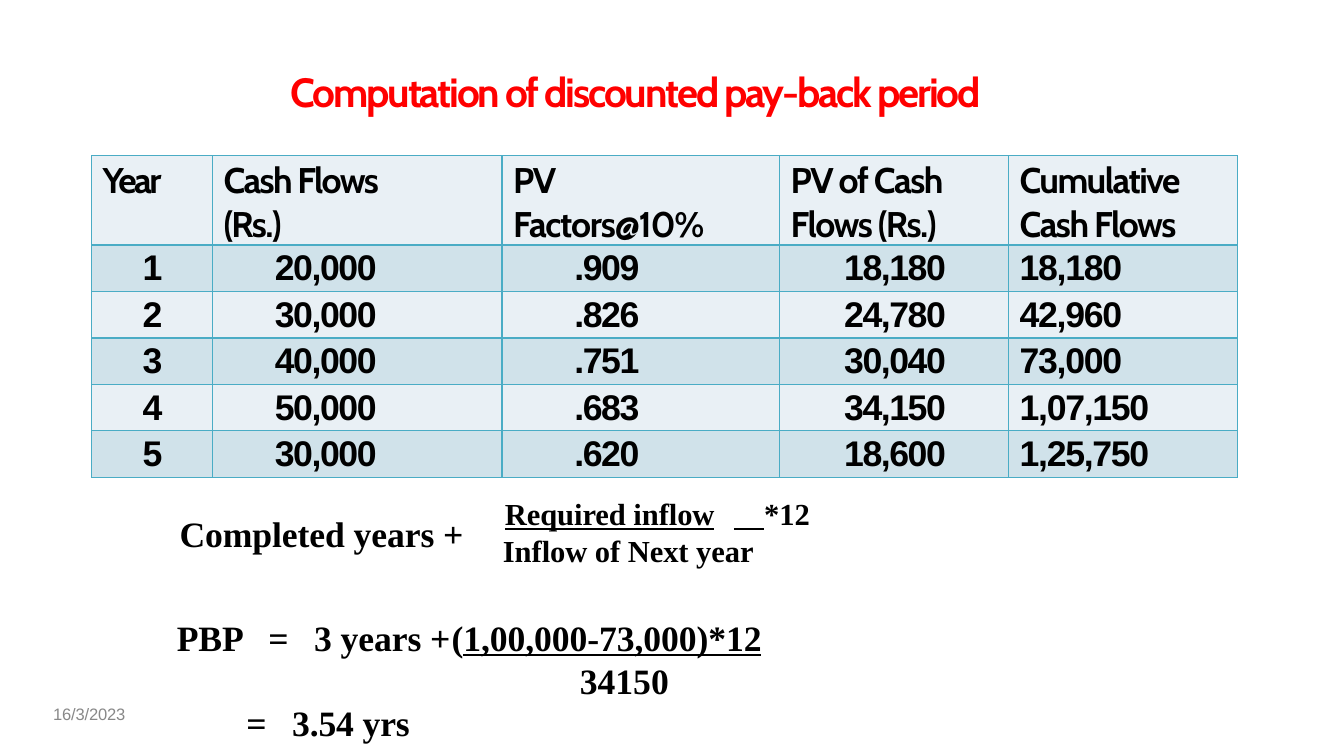
from lxml import etree
from pptx import Presentation
from pptx import util as u
from pptx.dml.color import RGBColor
from pptx.enum import text
from pptx.oxml import ns

RED = RGBColor(0xFF, 0x00, 0x00)
BLACK = RGBColor(0x00, 0x00, 0x00)
GREY = RGBColor(0x88, 0x88, 0x88)
LIGHT = RGBColor(0xE9, 0xF0, 0xF5)
BAND = RGBColor(0xD0, 0xE2, 0xEA)
EDGE = RGBColor(0x4A, 0xAC, 0xC5)

TITLE = dict(name="Cabin", size=u.Pt(32), bold=True, color=RED)
HEAD = dict(name="Cabin", size=u.Pt(28), bold=True, color=BLACK)
BODY = dict(HEAD, name="Arial")
MATH = dict(HEAD, name="Times New Roman")
RATIO = dict(MATH, size=u.Pt(24))
DATE = dict(name="Arial", size=u.Pt(13), bold=False, color=GREY)

WIDTHS = [1.32, 3.16, 3.03, 2.5, 2.5]
HEADS = [("Year",), ("Cash Flows", "(Rs.)"), ("PV", "Factors@10%"),
         ("PV of Cash", "Flows (Rs.)"), ("Cumulative", "Cash Flows")]
TRACKS = [-2, -1.3, -1, -1.2, -1.2]
ROWS = [
    ("1", "20,000", ".909", "18,180", "18,180"),
    ("2", "30,000", ".826", "24,780", "42,960"),
    ("3", "40,000", ".751", "30,040", "73,000"),
    ("4", "50,000", ".683", "34,150", "1,07,150"),
    ("5", "30,000", ".620", "18,600", "1,25,750"),
]
LEFT, MID = text.PP_ALIGN.LEFT, text.PP_ALIGN.CENTER
STYLES = [(MID, 0.01, 0), (LEFT, 0.68, -1.1), (LEFT, 0.79, -1.1),
          (MID, 0.02, -1.1), (LEFT, 0.12, -1)]


def put(para, runs, form, indent=0.01, before=0, tabs=(), track=0, align=LEFT):
    """Write (text, underline) runs into a paragraph with its layout."""
    para.alignment = align
    para.space_before = u.Pt(before)
    props = para._p.get_or_add_pPr()
    props.set("marL", str(u.Inches(indent)))
    props.set("indent", "0")
    if tabs:
        stops = etree.SubElement(props, ns.qn("a:tabLst"))
        for stop in tabs:
            etree.SubElement(stops, ns.qn("a:tab"), pos=str(u.Inches(stop)), algn="l")
    for words, line in runs:
        run = para.add_run()
        run.text = words
        for key, value in form.items():
            if key == "color":
                run.font.color.rgb = value
            else:
                setattr(run.font, key, value)
        run.font.underline = line
        run._r.get_or_add_rPr().set("spc", str(round(track * 100)))


def add_box(slide, box, lines, form, top=0.01):
    """Place a text box and fill it with one paragraph per line."""
    frame = slide.shapes.add_textbox(*map(u.Inches, box)).text_frame
    frame.word_wrap = True
    frame.margin_left = frame.margin_right = frame.margin_bottom = 0
    frame.margin_top = u.Inches(top)
    for i, (runs, opts) in enumerate(lines):
        para = frame.add_paragraph() if i else frame.paragraphs[0]
        put(para, runs, form, **opts)
    return frame


def add_edges(cell):
    """Draw a thin line on all four sides of a cell."""
    props = cell._tc.get_or_add_tcPr()
    for i, side in enumerate(("lnL", "lnR", "lnT", "lnB")):
        line = etree.Element(ns.qn(f"a:{side}"), w=str(u.Pt(1)))
        fill = etree.SubElement(line, ns.qn("a:solidFill"))
        etree.SubElement(fill, ns.qn("a:srgbClr"), val=str(EDGE))
        props.insert(i, line)


def fill_cell(cell, lines, form, color, **opts):
    """Fill one table cell with its lines, colour and edges."""
    cell.margin_left = cell.margin_right = cell.margin_bottom = 0
    cell.margin_top = u.Inches(0.04)
    cell.fill.solid()
    cell.fill.fore_color.rgb = color
    add_edges(cell)
    frame = cell.text_frame
    for i, words in enumerate(lines):
        para = frame.add_paragraph() if i else frame.paragraphs[0]
        put(para, [(words, False)], form, before=0 if i else 2.6, **opts)


def add_flows(slide, left, top):
    """Build the cash flow table from its top left corner."""
    size = len(ROWS) + 1, len(WIDTHS)
    spot = map(u.Inches, (left, top, sum(WIDTHS), 0.84 + 0.48 * len(ROWS)))
    table = slide.shapes.add_table(*size, *spot).table
    table.first_row = table.horz_banding = False
    for col, width in zip(table.columns, WIDTHS):
        col.width = u.Inches(width)
    for i, row in enumerate(table.rows):
        row.height = u.Inches(0.48 if i else 0.84)
    for c, (lines, track) in enumerate(zip(HEADS, TRACKS)):
        fill_cell(table.cell(0, c), lines, HEAD, LIGHT, indent=0.12, track=track)
    for r, row in enumerate(ROWS, 1):
        for c, (words, (align, indent, track)) in enumerate(zip(row, STYLES)):
            fill_cell(table.cell(r, c), [words], BODY, BAND if r % 2 else LIGHT,
                      align=align, indent=indent, track=track)


def add_rule(slide, left, top):
    """Place the general pay-back formula."""
    add_box(slide, (left, top + 0.19, 3.16, 0.48),
            [([("Completed years +", False)], dict(before=0.9, track=-0.05))], MATH)
    add_box(slide, (left + 3.53, top, 4.68, 0.82), [
        ([("Required inflow", True), ("\t", False), ("    ", True), ("*12", False)],
         dict(indent=0.03, before=0.9, tabs=[3], track=-0.05)),
        ([("Inflow of Next year", False)], dict(track=-0.05)),
    ], RATIO)


def add_result(slide, left, top):
    """Place the worked pay-back period."""
    add_box(slide, (left, top, 6.83, 1.43), [
        ([("PBP\t=\t3 years +\t(", False), ("1,00,000-73,000)*12", True)],
         dict(before=0.9, tabs=[0.78, 1.58, 3.26], track=-0.05)),
        ([("34150", False)], dict(indent=4.41)),
        ([("=\t3.54 yrs", False)], dict(indent=0.77, tabs=[1.25], track=-0.1)),
    ], MATH)


def main():
    """Build and save the slide."""
    deck = Presentation()
    deck.slide_width, deck.slide_height = u.Inches(14.67), u.Inches(8.25)
    slide = deck.slides.add_slide(deck.slide_layouts[6])
    date = add_box(slide, (0.57, 7.69, 1.1, 0.21),
                   [([("16/3/2023", False)], dict(track=-0.1))], DATE, top=0)
    date.paragraphs[0].line_spacing = u.Pt(15.3)
    add_box(slide, (3.16, 0.72, 8.12, 0.56),
            [([("Computation of discounted pay-back period", False)],
              dict(before=1, track=-1.7))], TITLE)
    add_flows(slide, 1, 1.7)
    add_rule(slide, 1.95, 5.39)
    add_result(slide, 1.92, 6.71)
    deck.save("out.pptx")


if __name__ == "__main__":
    main()
